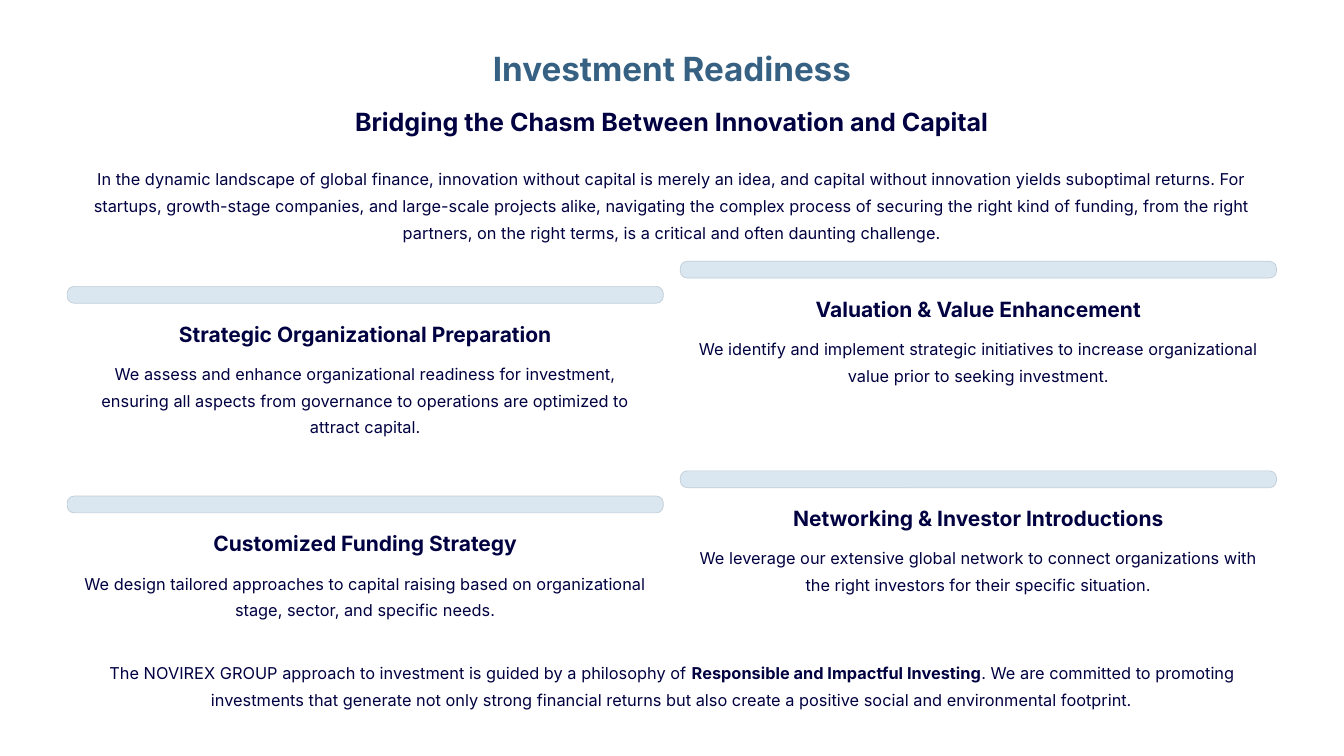
"""Build the Investment Readiness slide with four service cards."""
from pptx import Presentation
from pptx.dml.color import RGBColor
from pptx.enum.shapes import MSO_SHAPE
from pptx.enum.text import MSO_ANCHOR, MSO_AUTO_SIZE, PP_ALIGN
from pptx.util import Cm, Pt

COLORS = {"title": "366183", "text": "010141", "bar": "DBE7F0", "edge": "C1CDD6"}
STYLES = {
    "title": {"size": 28.5, "bold": True, "color": "title", "leading": 36},
    "subtitle": {"size": 21.5, "bold": True, "color": "text", "leading": 27},
    "heading": {"size": 18, "bold": True, "color": "text", "leading": 22.5},
    "body": {"size": 14, "bold": False, "color": "text", "leading": 23},
}
FRAME = {
    "margin_left": 0, "margin_top": 0, "margin_right": 0, "margin_bottom": 0,
    "word_wrap": True, "auto_size": MSO_AUTO_SIZE.NONE,
    "vertical_anchor": MSO_ANCHOR.TOP,
}
CARDS = [
    ("Strategic Organizational Preparation",
     "We assess and enhance organizational readiness for investment, ensuring all "
     "aspects from governance to operations are optimized to attract capital."),
    ("Valuation & Value Enhancement",
     "We identify and implement strategic initiatives to increase organizational "
     "value prior to seeking investment."),
    ("Customized Funding Strategy",
     "We design tailored approaches to capital raising based on organizational "
     "stage, sector, and specific needs."),
    ("Networking & Investor Introductions",
     "We leverage our extensive global network to connect organizations with the "
     "right investors for their specific situation."),
]
INTRO = (
    "In the dynamic landscape of global finance, innovation without capital is merely "
    "an idea, and capital without innovation yields suboptimal returns. For startups, "
    "growth-stage companies, and large-scale projects alike, navigating the complex "
    "process of securing the right kind of funding, from the right partners, on the "
    "right terms, is a critical and often daunting challenge."
)
CLOSING = [
    "The NOVIREX GROUP approach to investment is guided by a philosophy of ",
    "Responsible and Impactful Investing",
    ". We are committed to promoting investments that generate not only strong "
    "financial returns but also create a positive social and environmental footprint.",
]
LEFT, WIDTH = 2.03, 36.58
CARD_WIDTH, PAD = 18.03, 0.51


def write(sp, box, style, *texts):
    """Place a text shape and fill it; every second run is bold."""
    sp.left, sp.top, sp.width, sp.height = [Cm(v) for v in box]
    tf = sp.text_frame
    for name, value in FRAME.items():
        setattr(tf, name, value)
    fmt = STYLES[style]
    p = tf.paragraphs[0]
    p.alignment = PP_ALIGN.CENTER
    p.line_spacing = Pt(fmt["leading"])
    for i, text in enumerate(texts):
        r = p.add_run()
        r.text = text
        font = {"name": "Inter", "size": Pt(fmt["size"]), "bold": fmt["bold"] or i % 2 == 1}
        for name, value in font.items():
            setattr(r.font, name, value)
        r.font.color.rgb = RGBColor.from_string(COLORS[fmt["color"]])


def add_text(box, style, *texts):
    """Add a text box in the given style."""
    write(s.shapes.add_textbox(0, 0, 0, 0), box, style, *texts)


prs = Presentation()
prs.slide_width, prs.slide_height = Cm(40.64), Cm(22.86)
s = prs.slides.add_slide(prs.slide_layouts[5])

write(s.shapes.title, (LEFT, 1.4, WIDTH, 1.27), "title", "Investment Readiness")
add_text((LEFT, 3.18, WIDTH, 0.95), "subtitle",
         "Bridging the Chasm Between Innovation and Capital")
add_text((LEFT, 4.9, WIDTH, 2.43), "body", INTRO)

for i, (heading, body) in enumerate(CARDS):
    row, col = divmod(i, 2)
    x = LEFT + col * (CARD_WIDTH + PAD)
    y = 8.66 + row * 6.34 - col * 0.76
    sp = s.shapes.add_shape(MSO_SHAPE.ROUNDED_RECTANGLE,
                            Cm(x), Cm(y), Cm(CARD_WIDTH), Cm(0.51))
    sp.adjustments[0] = 0.42
    sp.shadow.inherit = False
    sp.fill.solid()
    sp.fill.fore_color.rgb = RGBColor.from_string(COLORS["bar"])
    sp.line.color.rgb = RGBColor.from_string(COLORS["edge"])
    sp.line.width = Pt(0.6)
    text_width = CARD_WIDTH - 2 * PAD
    add_text((x + PAD, y + 1.02, text_width, 0.79), "heading", heading)
    add_text((x + PAD, y + 2.13, text_width, 2.43), "body", body)

add_text((LEFT, 19.84, WIDTH, 1.63), "body", *CLOSING)

prs.save("out.pptx")
